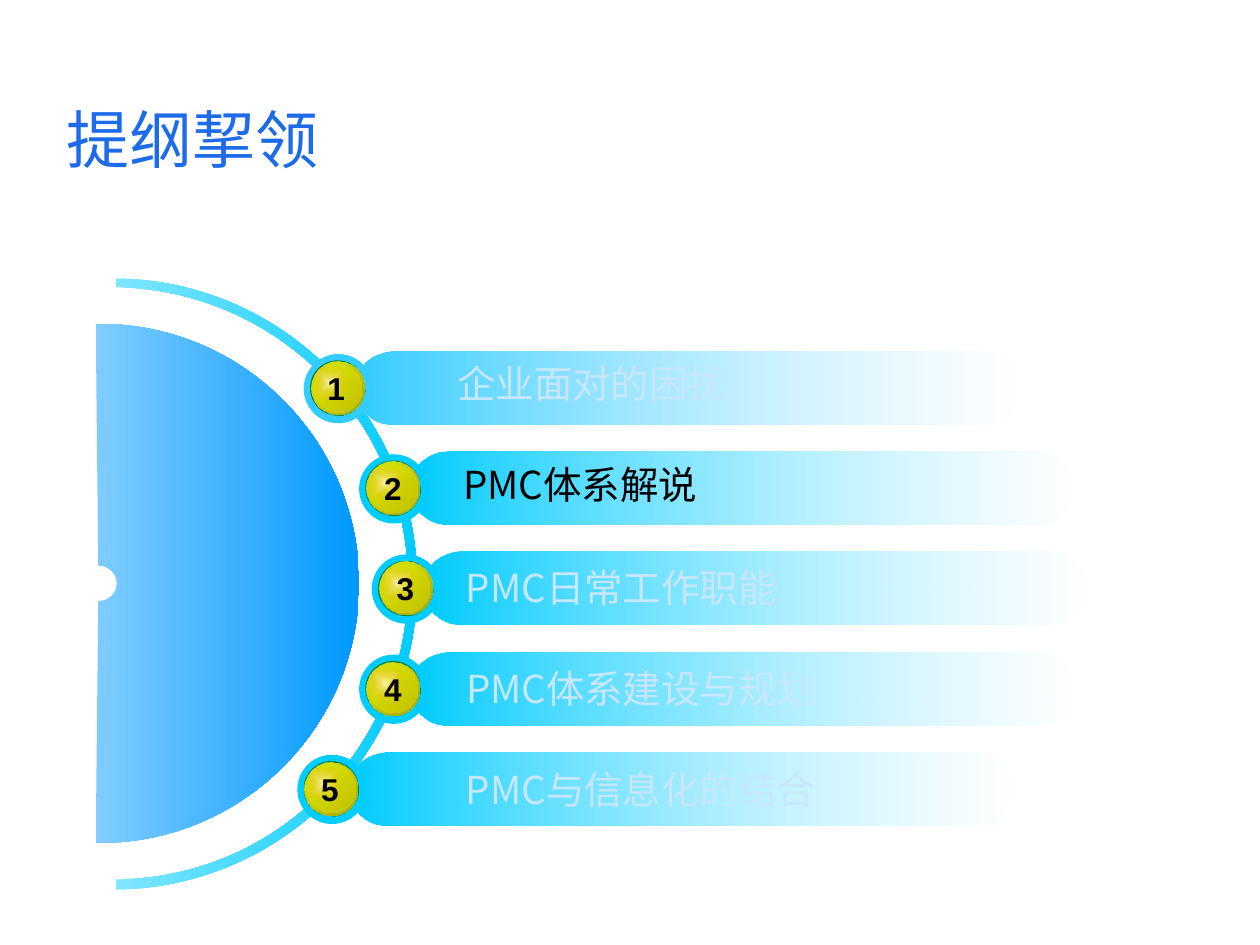
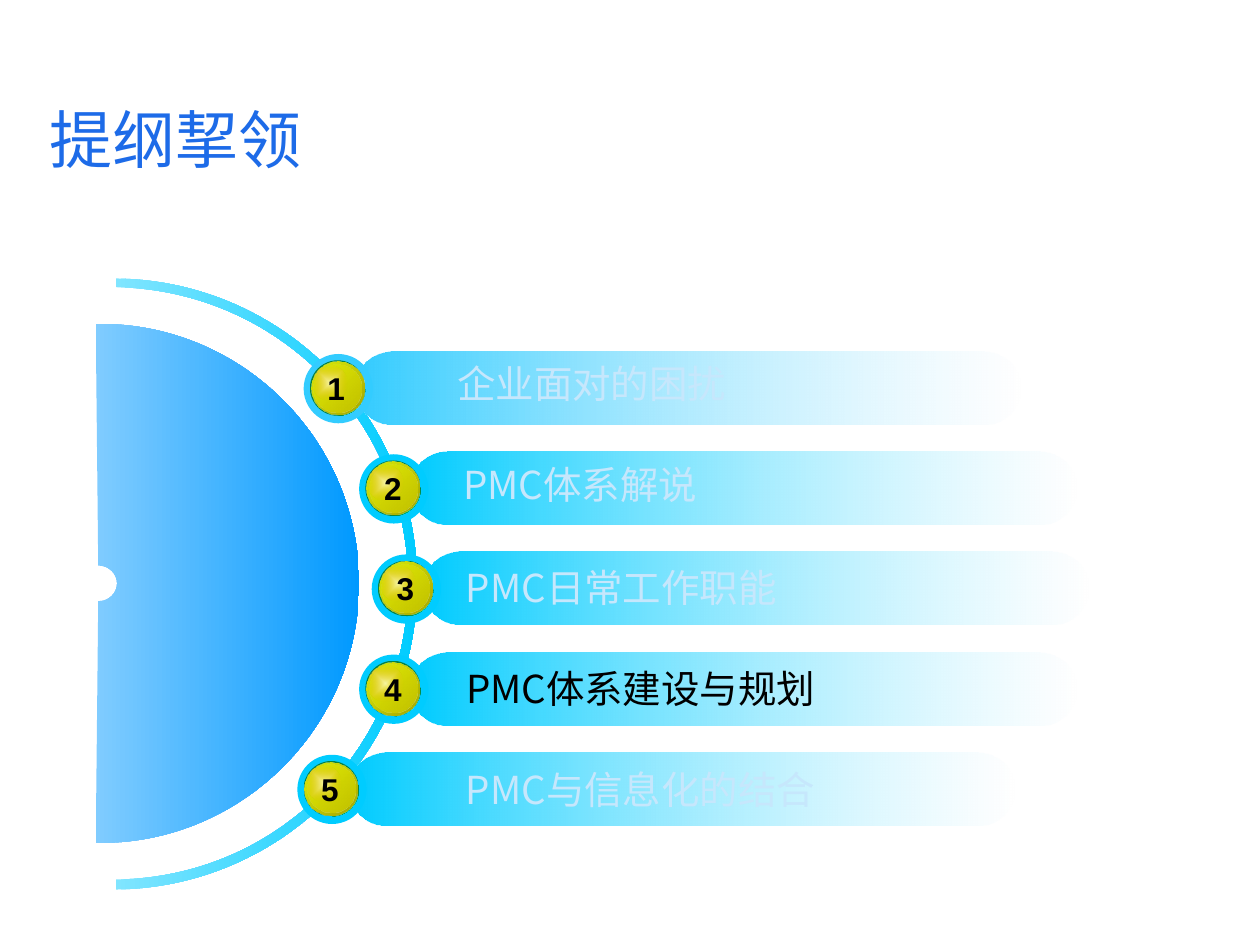
"""Build two agenda slides, each highlighting one topic on an arc of numbered badges."""
from lxml import etree
from pptx import Presentation
from pptx.dml.color import RGBColor
from pptx.enum.shapes import MSO_SHAPE as Shape
from pptx.enum.text import MSO_ANCHOR as Anchor, MSO_AUTO_SIZE as AutoSize, PP_ALIGN as Align
from pptx.oxml import parse_xml
from pptx.oxml.ns import nsdecls, qn
from pptx.util import Inches, Pt

BLACK = RGBColor(0x00, 0x00, 0x00)
WHITE = RGBColor(0xFF, 0xFF, 0xFF)
TITLE_BLUE = RGBColor(0x1D, 0x6B, 0xE8)
MUTED = RGBColor(0xC6, 0xE7, 0xFC)
CYAN = RGBColor(0x00, 0xCC, 0xFF)
SKY = RGBColor(0x33, 0xCC, 0xFF)
PALE_CYAN = RGBColor(0x80, 0xE5, 0xFF)
BLUE = RGBColor(0x00, 0x99, 0xFF)
PALE_BLUE = RGBColor(0x80, 0xCC, 0xFF)
GREEN = RGBColor(0x10, 0xE4, 0x70)
DARK_GREEN = RGBColor(0x09, 0x83, 0x40)
YELLOW = RGBColor(0xFF, 0xFF, 0x00)
OLIVE = RGBColor(0xA2, 0xA2, 0x00)
LIGHT_OLIVE = RGBColor(0xC2, 0xC2, 0x00)
ORANGE = RGBColor(0xE9, 0x94, 0x0B)

LABEL_FONT = "Noto Sans CJK SC"
LEFT_TO_RIGHT = '<a:lin ang="0" scaled="1"/>'
DIAGONAL = '<a:lin ang="2700000" scaled="1"/>'
TO_CORNER = '<a:path path="rect"><a:fillToRect l="100000" t="100000"/></a:path>'
TO_CENTRE = ('<a:path path="shape">'
             '<a:fillToRect l="50000" t="50000" r="50000" b="50000"/></a:path>')

ARC = [
    ("moveTo", [(0.92, 2.28)]),
    ("cubicBezTo", [(2.21, 2.3), (3.24, 3.35), (3.24, 4.63)]),
    ("cubicBezTo", [(3.24, 5.92), (2.21, 6.97), (0.92, 6.98)]),
    ("lnTo", [(0.92, 7.06)]),
    ("cubicBezTo", [(2.25, 7.04), (3.31, 5.96), (3.31, 4.63)]),
    ("cubicBezTo", [(3.31, 3.31), (2.25, 2.23), (0.92, 2.21)]),
]
HALF_DISC = [
    ("moveTo", [(0.78, 4.49)]),
    ("cubicBezTo", [(0.78, 4.49), (0.79, 4.49), (0.79, 4.49)]),
    ("cubicBezTo", [(0.86, 4.49), (0.93, 4.55), (0.93, 4.63)]),
    ("cubicBezTo", [(0.93, 4.71), (0.86, 4.77), (0.79, 4.77)]),
    ("cubicBezTo", [(0.79, 4.77), (0.78, 4.77), (0.78, 4.77)]),
    ("lnTo", [(0.76, 6.69)]),
    ("cubicBezTo", [(0.77, 6.69), (0.78, 6.69), (0.79, 6.69)]),
    ("cubicBezTo", [(1.92, 6.69), (2.85, 5.77), (2.85, 4.63)]),
    ("cubicBezTo", [(2.85, 3.49), (1.92, 2.57), (0.79, 2.57)]),
    ("cubicBezTo", [(0.78, 2.57), (0.77, 2.57), (0.76, 2.57)]),
]
ORB_LAYERS = [
    (0.05, 0.05, 0.44, (GREEN, 100), (DARK_GREEN, 100), TO_CORNER),
    (0.06, 0.06, 0.42, (YELLOW, 85), (OLIVE, 100), DIAGONAL),
    (0.07, 0.09, 0.28, (WHITE, 100), (ORANGE, 0), TO_CENTRE),
    (0.08, 0.08, 0.38, (YELLOW, 0), (LIGHT_OLIVE, 100), DIAGONAL),
]
TOPICS = [
    ("企业面对的困扰", 2.41, 2.5, SKY, 3.53, 2.81, 5.02),
    ("PMC体系解说", 2.85, 2.95, CYAN, 3.58, 3.61, 3.64),
    ("PMC日常工作职能", 2.95, 3.05, CYAN, 3.6, 4.43, 4.8),
    ("PMC体系建设与规划", 2.85, 2.95, CYAN, 3.6, 5.23, 4.39),
    ("PMC与信息化的结合", 2.36, 2.45, CYAN, 3.6, 6.03, 3.9),
]
FIRST_BAR_TOP, LAST_BAR_TOP = 2.79, 5.97
ROW_PITCH = (LAST_BAR_TOP - FIRST_BAR_TOP) / (len(TOPICS) - 1)
SLIDES = [(0.43, 2), (0.29, 4)]


def paint(shape, start, end, direction):
    """Fill a shape with a two-colour gradient and remove outline and shadow."""
    shape.shadow.inherit = False
    shape.line.fill.background()
    shape.fill.solid()
    stops = "".join(
        f'<a:gs pos="{position}"><a:srgbClr val="{color}">'
        f'<a:alpha val="{opacity * 1000}"/></a:srgbClr></a:gs>'
        for position, (color, opacity) in ((0, start), (100000, end)))
    gradient = parse_xml(f'<a:gradFill {nsdecls("a")} rotWithShape="1">'
                         f'<a:gsLst>{stops}</a:gsLst>{direction}</a:gradFill>')
    properties = shape._element.spPr
    properties.replace(properties.find(qn("a:solidFill")), gradient)


def add_text(slide, text, left, top, width, height, font_name, size, color):
    """Add a one-line text box and return it."""
    box = slide.shapes.add_textbox(Inches(left), Inches(top), Inches(width), Inches(height))
    box.text_frame.word_wrap = True
    paragraph = box.text_frame.paragraphs[0]
    paragraph.text = text
    paragraph.font.name = font_name
    paragraph.font.size = Pt(size)
    paragraph.font.color.rgb = color
    etree.SubElement(paragraph.font._element, qn("a:ea"), typeface=font_name)
    return box


presentation = Presentation()
presentation.slide_width = Inches(10)
presentation.slide_height = Inches(7.5)

for title_left, current_topic in SLIDES:
    slide = presentation.slides.add_slide(presentation.slide_layouts[5])

    title = slide.shapes.title
    title.left, title.top = Inches(title_left), Inches(0.75)
    title.width, title.height = Inches(2.65), Inches(0.71)
    title.text_frame.auto_size = AutoSize.NONE
    title.text_frame.vertical_anchor = Anchor.TOP
    paragraph = title.text_frame.paragraphs[0]
    paragraph.text = "提纲挈领"
    paragraph.alignment = Align.LEFT
    paragraph.font.name = "Arial"
    paragraph.font.size = Pt(36)
    paragraph.font.color.rgb = TITLE_BLUE

    for outline, pale, strong in ((ARC, PALE_CYAN, CYAN), (HALF_DISC, PALE_BLUE, BLUE)):
        xs, ys = zip(*(point for _, points in outline for point in points))
        left, top, right, bottom = min(xs), min(ys), max(xs), max(ys)
        builder = slide.shapes.build_freeform(Inches(left), Inches(top))
        builder.add_line_segments([(Inches(right), Inches(top)), (Inches(right), Inches(bottom))])
        shape = builder.convert_to_shape()
        geometry = shape._element.spPr.find(".//" + qn("a:path"))
        for segment in list(geometry):
            geometry.remove(segment)
        for command, points in outline:
            segment = etree.SubElement(geometry, qn(f"a:{command}"))
            for x, y in points:
                etree.SubElement(segment, qn("a:pt"), x=str(int(Inches(x - left))),
                                 y=str(int(Inches(y - top))))
        etree.SubElement(geometry, qn("a:close"))
        paint(shape, (pale, 100), (strong, 100), LEFT_TO_RIGHT)

    for row, topic in enumerate(TOPICS):
        _, badge_left, digit_left, color, *_ = topic
        bar_top = FIRST_BAR_TOP + row * ROW_PITCH
        badge_top = bar_top + 0.02

        bar = slide.shapes.add_shape(Shape.ROUNDED_RECTANGLE, Inches(badge_left + 0.41),
                                     Inches(bar_top), Inches(5.28), Inches(0.58))
        bar.adjustments[0] = 0.5
        paint(bar, (color, 100), (WHITE, 50), LEFT_TO_RIGHT)

        badge = slide.shapes.add_group_shape()
        ring = badge.shapes.add_shape(Shape.OVAL, Inches(badge_left), Inches(badge_top),
                                      Inches(0.55), Inches(0.55))
        ring.shadow.inherit = False
        ring.fill.solid()
        ring.fill.fore_color.rgb = color
        ring.line.fill.background()
        for dx, dy, diameter, start, end, direction in ORB_LAYERS:
            layer = badge.shapes.add_shape(
                Shape.OVAL, Inches(badge_left + dx), Inches(badge_top + dy),
                Inches(diameter), Inches(diameter))
            paint(layer, start, end, direction)

        digit = add_text(slide, str(row + 1), digit_left, badge_top + 0.07,
                         0.34, 0.4, "Arial", 18, BLACK)
        digit.text_frame.word_wrap = False
        digit.text_frame.paragraphs[0].font.bold = True

    for number, (text, _, _, _, left, top, width) in enumerate(TOPICS, 1):
        add_text(slide, text, left, top, width, 0.47, LABEL_FONT, 22,
                 BLACK if number == current_topic else MUTED)

presentation.save("out.pptx")
